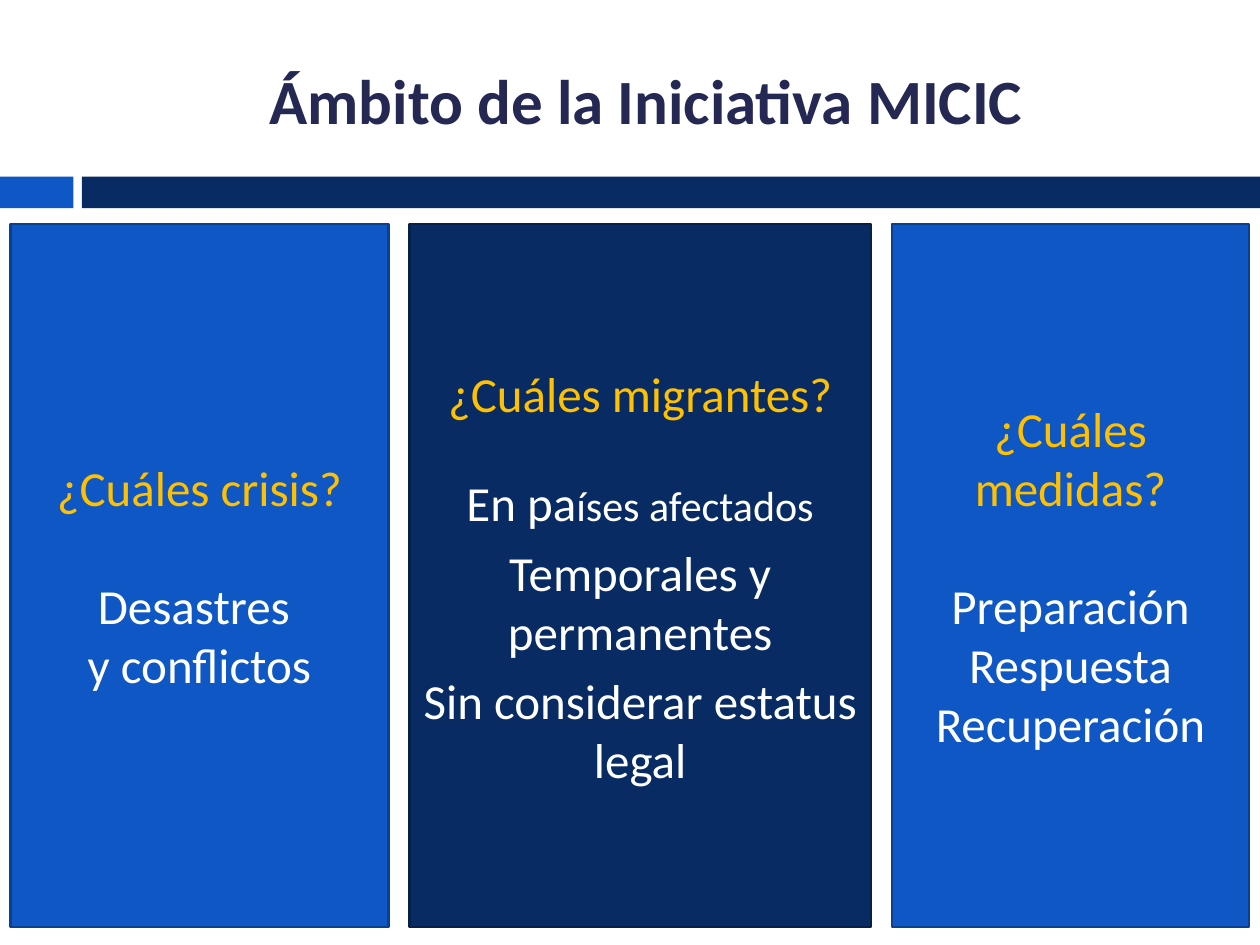
from pptx import Presentation
from pptx.dml.color import RGBColor
from pptx.enum.shapes import MSO_SHAPE
from pptx.enum.text import MSO_ANCHOR, PP_ALIGN
from pptx.util import Cm, Pt

RECTANGLE = MSO_SHAPE.RECTANGLE
MIDDLE = MSO_ANCHOR.MIDDLE
CENTER = PP_ALIGN.CENTER

FONT = "Calibri"
COLORS = {
    "blue": "0E57C4",
    "blue_edge": "0A4091",
    "navy": "072B62",
    "navy_edge": "052049",
    "title": "242852",
    "question": "FFC000",
    "answer": "FFFFFF",
}

SLIDE_WIDTH = 25.4
SLIDE_HEIGHT = 19.05
BAND_TOP = 3.56
BAND_HEIGHT = 0.64
PANEL_LEFT = 0.21
PANEL_TOP = 4.52
PANEL_HEIGHT = 14.17
PANEL_GAP = 0.42

PANELS = [
    (7.62, "blue", "¿Cuáles crisis?", 34, 0,
     [[("Desastres ", 28)], [("y conflictos", 28)]]),
    (9.31, "navy", "¿Cuáles migrantes?", 29, 6,
     [[("En pa", 28), ("íses afectados", 24)],
      [("Temporales y permanentes", 28)],
      [("Sin considerar estatus legal", 28)]]),
    (7.2, "blue", "¿Cuáles medidas?", 34, 0,
     [[("Preparación", 28)], [("Respuesta", 28)], [("Recuperación", 28)]]),
]


def color(name):
    return RGBColor.from_string(COLORS[name])


def add_rectangle(slide, left, top, width, height, fill, edge=None):
    box = slide.shapes.add_shape(
        RECTANGLE, Cm(left), Cm(top), Cm(width), Cm(height))
    box.shadow.inherit = False
    box.fill.solid()
    box.fill.fore_color.rgb = color(fill)
    if edge:
        box.line.color.rgb = color(edge)
        box.line.width = Pt(1.5)
    else:
        box.line.fill.background()
    return box


def write_paragraph(para, pieces, color_name, space_after=0, bold=False):
    para.alignment = CENTER
    para.space_after = Pt(space_after)
    for text, size in pieces:
        span = para.add_run()
        span.text = text
        span.font.name = FONT
        span.font.size = Pt(size)
        span.font.bold = bold
        span.font.color.rgb = color(color_name)


def add_title(slide, text):
    box = slide.shapes.add_textbox(Cm(1.7), Cm(0.64), Cm(22.66), Cm(2.74))
    frame = box.text_frame
    frame.word_wrap = True
    frame.vertical_anchor = MIDDLE
    write_paragraph(frame.paragraphs[0], [(text, 36)], "title", bold=True)


def add_panel(slide, left, width, fill, question, question_gap, answer_gap, answers):
    box = add_rectangle(
        slide, left, PANEL_TOP, width, PANEL_HEIGHT, fill, fill + "_edge")
    frame = box.text_frame
    frame.word_wrap = True
    frame.vertical_anchor = MIDDLE
    write_paragraph(
        frame.paragraphs[0], [(question, 28)], "question", question_gap)
    for pieces in answers:
        write_paragraph(frame.add_paragraph(), pieces, "answer", answer_gap)


def main():
    deck = Presentation()
    deck.slide_width = Cm(SLIDE_WIDTH)
    deck.slide_height = Cm(SLIDE_HEIGHT)
    slide = deck.slides.add_slide(deck.slide_layouts[6])

    band_left = 1.65
    add_rectangle(slide, 0, BAND_TOP, 1.48, BAND_HEIGHT, "blue")
    add_rectangle(
        slide, band_left, BAND_TOP, SLIDE_WIDTH - band_left, BAND_HEIGHT, "navy")
    add_title(slide, "Ámbito de la Iniciativa MICIC")

    left = PANEL_LEFT
    for width, *content in PANELS:
        add_panel(slide, left, width, *content)
        left += width + PANEL_GAP

    deck.save("out.pptx")


if __name__ == "__main__":
    main()
